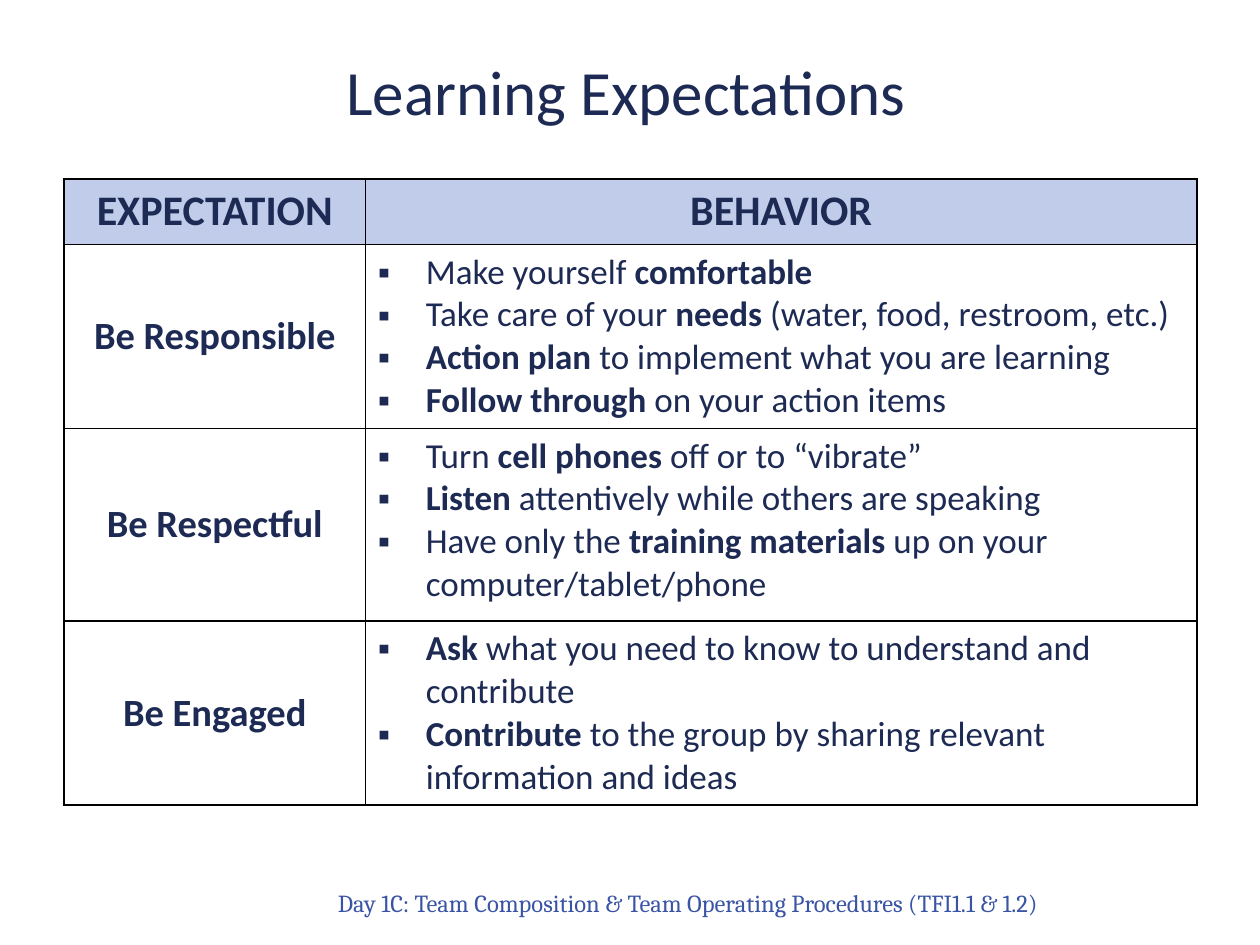
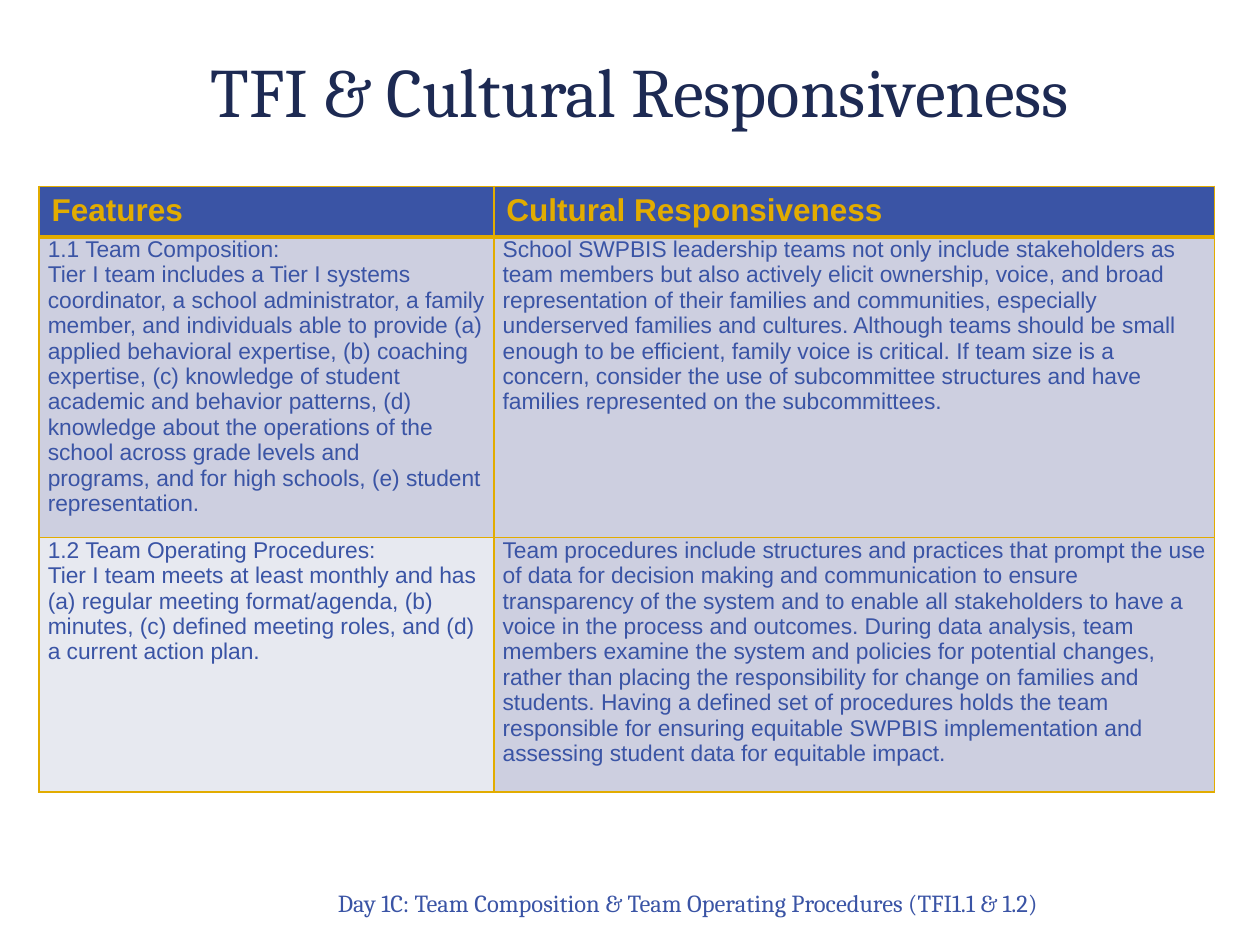
from lxml import etree
from pptx import Presentation
from pptx.dml.color import RGBColor
from pptx.enum.text import MSO_ANCHOR as Anchor, PP_ALIGN as Align
from pptx.oxml.ns import qn
from pptx.util import Inches, Pt

NAVY = RGBColor(0x1D, 0x2A, 0x53)
BLUE = RGBColor(0x3A, 0x54, 0xA5)
GOLD = RGBColor(0xE2, 0xAC, 0x00)
PALE_BLUE = RGBColor(0xC1, 0xCC, 0xEB)
LAVENDER = RGBColor(0xCD, 0xCF, 0xE0)
MIST = RGBColor(0xE7, 0xE9, 0xF0)
WHITE = RGBColor(0xFF, 0xFF, 0xFF)
BLACK = RGBColor(0, 0, 0)

FOOTER = "Day 1C: Team Composition & Team Operating Procedures (TFI1.1 & 1.2)"

EXPECTATIONS = [
    ("Be Responsible", [
        "Make yourself *comfortable*",
        "Take care of your *needs* (water, food, restroom, etc.)",
        "*Action plan* to implement what you are learning",
        "*Follow through* on your action items",
    ]),
    ("Be Respectful", [
        "Turn *cell phones* off or to “vibrate”",
        "*Listen* attentively while others are speaking",
        "Have only the *training materials* up on your computer/tablet/phone",
    ]),
    ("Be Engaged", [
        "*Ask* what you need to know to understand and contribute",
        "*Contribute* to the group by sharing relevant information and ideas",
    ]),
]

FEATURES = [
    ([
        "1.1 Team Composition:",
        "Tier I team includes a Tier I systems coordinator, a school administrator, "
        "a family member, and individuals able to provide (a) applied behavioral "
        "expertise, (b) coaching expertise, (c) knowledge of student academic and "
        "behavior patterns, (d) knowledge about the operations of the school across "
        "grade levels and",
        "programs, and for high schools, (e) student representation.",
    ], [
        "School SWPBIS leadership teams not only include stakeholders as team members "
        "but also actively elicit ownership, voice, and broad representation of their "
        "families and communities, especially underserved families and cultures. "
        "Although teams should be small enough to be efficient, family voice is "
        "critical. If team size is a concern, consider the use of subcommittee "
        "structures and have families represented on the subcommittees.",
    ], LAVENDER),
    ([
        "1.2 Team Operating Procedures:",
        "Tier I team meets at least monthly and has (a) regular meeting format/agenda, "
        "(b) minutes, (c) defined meeting roles, and (d) a current action plan.",
    ], [
        "Team procedures include structures and practices that prompt the use of data "
        "for decision making and communication to ensure transparency of the system and "
        "to enable all stakeholders to have a voice in the process and outcomes. During "
        "data analysis, team members examine the system and policies for potential "
        "changes, rather than placing the responsibility for change on families and "
        "students. Having a defined set of procedures holds the team responsible for "
        "ensuring equitable SWPBIS implementation and assessing student data for "
        "equitable impact.",
    ], MIST),
]


def add_bullet(p, color):
    pPr = p._p.get_or_add_pPr()
    pPr.set("marL", str(Inches(0.38)))
    pPr.set("indent", str(-Inches(0.38)))
    clr = etree.SubElement(pPr, qn("a:buClr"))
    etree.SubElement(clr, qn("a:srgbClr"), val=str(color))
    etree.SubElement(pPr, qn("a:buFont"), typeface="Arial")
    etree.SubElement(pPr, qn("a:buChar"), char="▪")


def write(tf, lines, size, font, color, bold=False, align=Align.LEFT, bullet=False):
    tf.word_wrap = True
    for i, line in enumerate(lines):
        p = tf.paragraphs[0] if i == 0 else tf.add_paragraph()
        p.alignment = align
        if bullet:
            add_bullet(p, color)
        for j, part in enumerate(line.split("*")):
            if part:
                r = p.add_run()
                r.text = part
                r.font.size = Pt(size)
                r.font.name = font
                r.font.color.rgb = color
                r.font.bold = bold or j % 2 == 1


def add_text(s, box, text, anchor, **fmt):
    tf = s.shapes.add_textbox(*map(Inches, box)).text_frame
    tf.vertical_anchor = anchor
    write(tf, [text], **fmt)


def add_slide(prs, title, title_box, title_size, title_font):
    s = prs.slides.add_slide(prs.slide_layouts[6])
    add_text(s, (1.48, 6.69, 6.86, 0.64), FOOTER, Anchor.BOTTOM,
             size=14, font="Cambria", color=BLUE, align=Align.RIGHT)
    add_text(s, title_box, title, Anchor.MIDDLE,
             size=title_size, font=title_font, color=NAVY, align=Align.CENTER)
    return s


def add_grid(s, left, top, cols, rows, line_color, rule=1):
    box = map(Inches, (left, top, sum(cols), sum(rows)))
    table = s.shapes.add_table(len(rows), len(cols), *box).table
    for column, width in zip(table.columns, cols):
        column.width = Inches(width)
    for i, (row, height) in enumerate(zip(table.rows, rows)):
        row.height = Inches(height)
        for cell in row.cells:
            tcPr = cell._tc.get_or_add_tcPr()
            widths = {"L": 1, "R": 1, "T": rule if i == 1 else 1, "B": rule if i == 0 else 1}
            for side, width in widths.items():
                ln = etree.SubElement(tcPr, qn(f"a:ln{side}"), w=str(Pt(width)))
                fill = etree.SubElement(ln, qn("a:solidFill"))
                etree.SubElement(fill, qn("a:srgbClr"), val=str(line_color))
    return table


def fill_cell(cell, lines, fill, anchor=Anchor.TOP, inset=(0.1, 0.05), **fmt):
    cell.fill.solid()
    cell.fill.fore_color.rgb = fill
    cell.vertical_anchor = anchor
    cell.margin_left = cell.margin_right = Inches(inset[0])
    cell.margin_top = cell.margin_bottom = Inches(inset[1])
    write(cell.text_frame, lines, **fmt)


def expectations_table(s, left, top):
    table = add_grid(s, left, top, [2.39, 6.6], [0.52, 1.46, 1.53, 1.46], BLACK)
    base = dict(font="Calibri", color=NAVY)
    for c, heading in enumerate(["EXPECTATION", "BEHAVIOR"]):
        fill_cell(table.cell(0, c), [heading], PALE_BLUE, size=24, bold=True,
                  align=Align.CENTER, **base)
    for i, (expectation, behaviors) in enumerate(EXPECTATIONS, 1):
        fill_cell(table.cell(i, 0), [expectation], WHITE, Anchor.MIDDLE, size=22,
                  bold=True, align=Align.CENTER, **base)
        fill_cell(table.cell(i, 1), behaviors, WHITE, size=20, bullet=True, **base)


def features_table(s, left, top):
    table = add_grid(s, left, top, [3.61, 1.91, 3.81], [0.38, 2.29, 2.02], GOLD, rule=3)
    for i in range(3):
        table.cell(i, 1).merge(table.cell(i, 2))
    for c, heading in enumerate(["Features", "Cultural Responsiveness"]):
        fill_cell(table.cell(0, c), [heading], BLUE, size=18, font="Arial",
                  color=GOLD, bold=True)
    body = dict(inset=(0.07, 0), size=13, font="Arial", color=BLUE)
    for i, (feature, response, feature_fill) in enumerate(FEATURES, 1):
        fill_cell(table.cell(i, 0), feature, feature_fill, **body)
        fill_cell(table.cell(i, 1), response, LAVENDER, **body)


def main():
    prs = Presentation()
    prs.slide_width, prs.slide_height = Inches(10), Inches(7.5)
    s = add_slide(prs, "Learning Expectations", (0.51, 0.38, 8.92, 0.68), 36, "Calibri")
    expectations_table(s, 0.51, 1.42)
    s = add_slide(prs, "TFI & Cultural Responsiveness", (1, 0.32, 8.16, 0.79), 39.6, "Cambria")
    features_table(s, 0.31, 1.48)
    prs.save("out.pptx")


if __name__ == "__main__":
    main()
